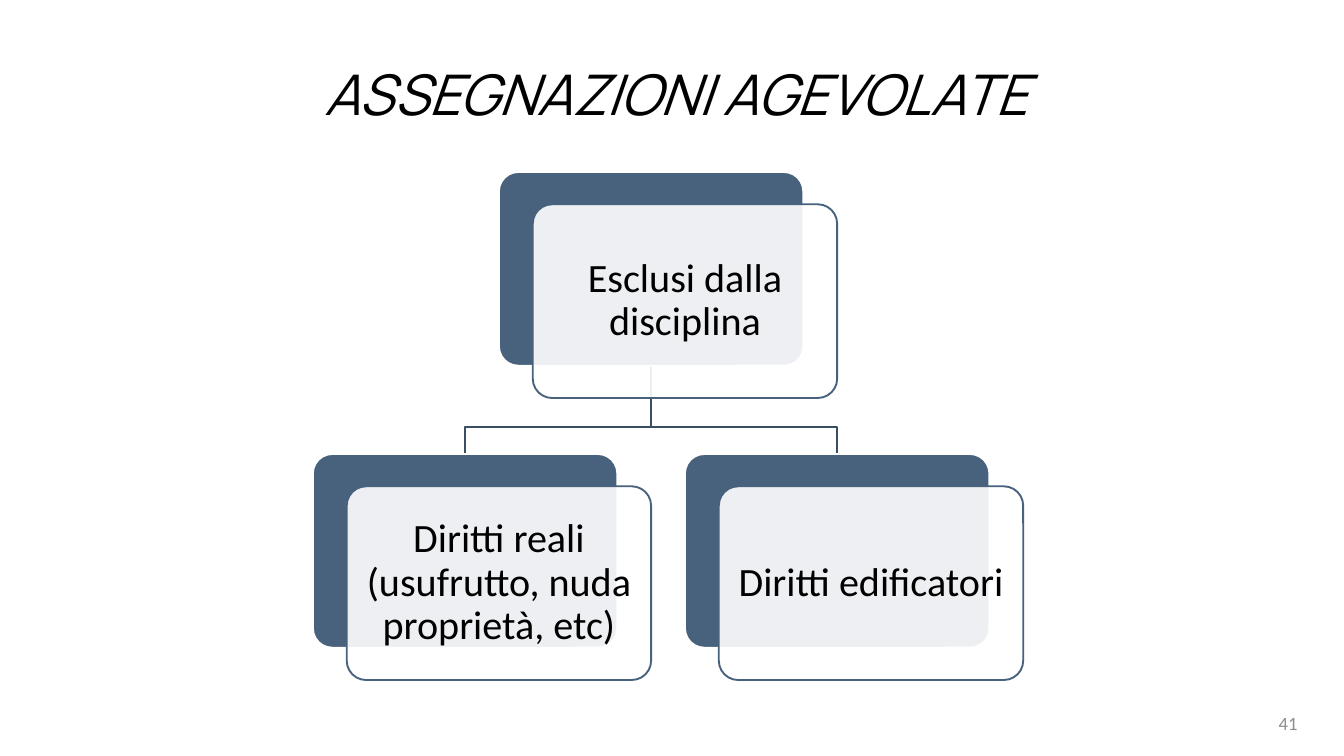
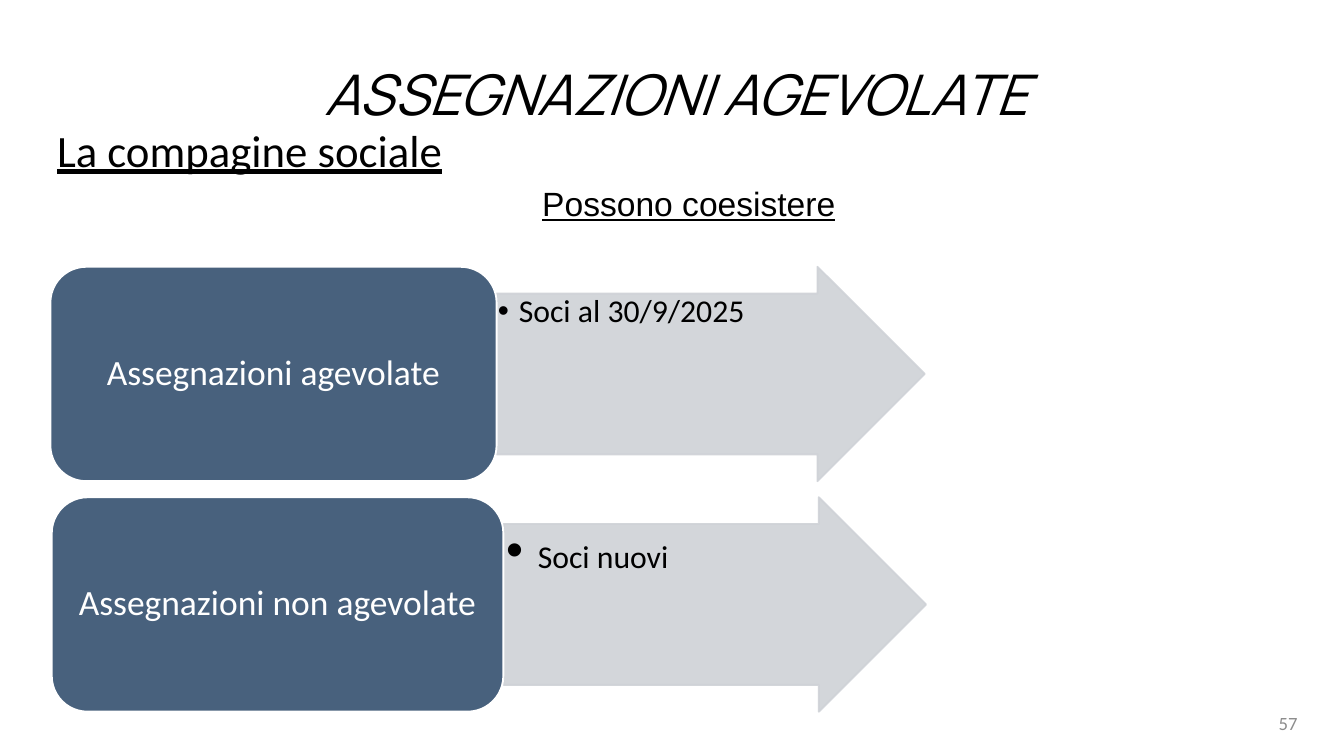
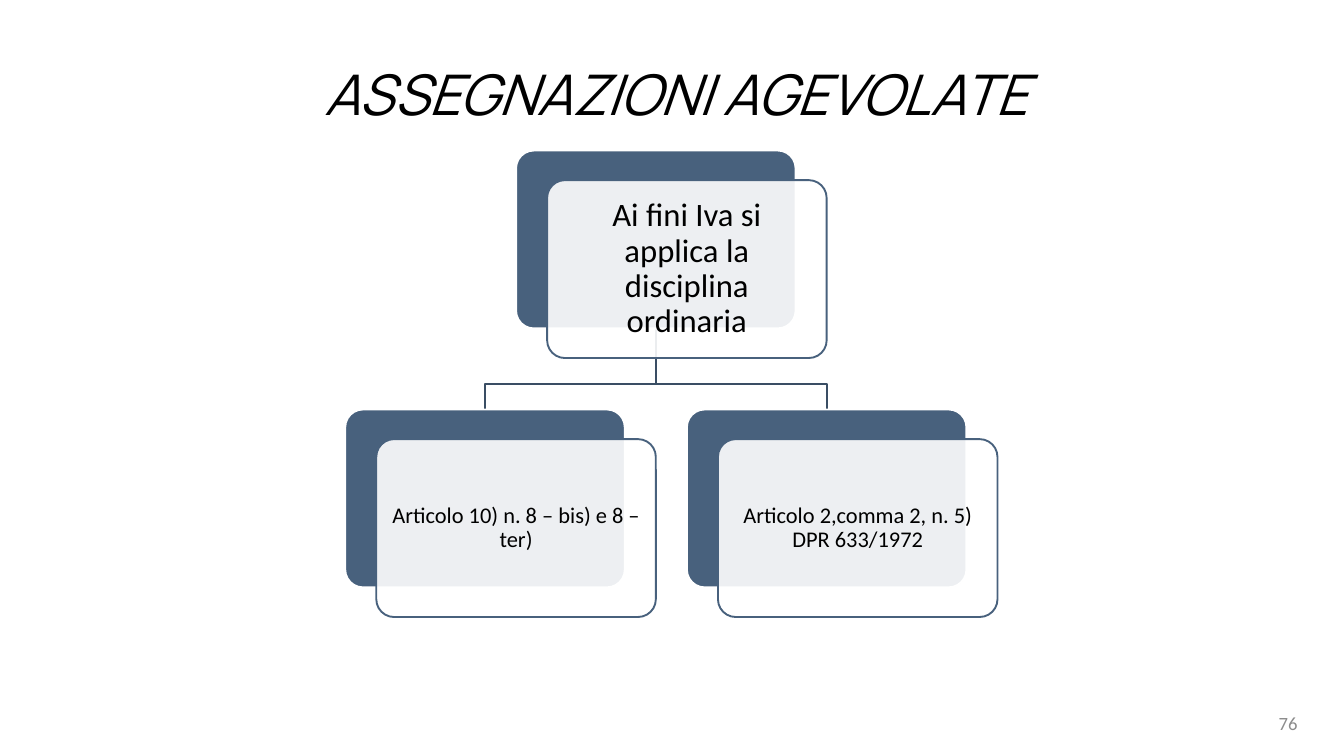
from lxml import etree
from pptx import Presentation
from pptx import util as u
from pptx.dml.color import RGBColor
from pptx.enum import shapes, text
from pptx.oxml import ns

BLACK = RGBColor(0x00, 0x00, 0x00)
WHITE = RGBColor(0xFF, 0xFF, 0xFF)
SLATE = RGBColor(0x48, 0x61, 0x7D)
BRANCH = RGBColor(0x3A, 0x4E, 0x64)
MIST = RGBColor(0xCF, 0xD2, 0xD7)
GREY = RGBColor(0x8C, 0x8C, 0x8C)

TITLE_ONLY, TWO_CONTENT = 5, 3
CENTER, RIGHT, LEFT = text.PP_ALIGN.CENTER, text.PP_ALIGN.RIGHT, text.PP_ALIGN.LEFT
TOP, MIDDLE = text.MSO_ANCHOR.TOP, text.MSO_ANCHOR.MIDDLE


def write(shape, content, size, font="Calibri", color=BLACK, align=LEFT, anchor=TOP,
          spacing=1.0, insets=(0.1, 0.05), italic=False, underline=False,
          wrap=True, grow=False, hanging=None):
    frame = shape.text_frame
    frame.word_wrap = wrap
    fit = text.MSO_AUTO_SIZE
    frame.auto_size = fit.SHAPE_TO_FIT_TEXT if grow else fit.NONE
    frame.vertical_anchor = anchor
    frame.margin_left = frame.margin_right = u.Inches(insets[0])
    frame.margin_top = frame.margin_bottom = u.Inches(insets[1])
    paragraph = frame.paragraphs[0]
    paragraph.alignment = align
    paragraph.line_spacing = spacing
    paragraph.space_before = u.Pt(0)
    if hanging:
        properties = paragraph._p.get_or_add_pPr()
        properties.set("marL", str(u.Inches(hanging)))
        properties.set("indent", str(-u.Inches(hanging)))
    pieces = [(content, size)] if isinstance(content, str) else content
    for words, points in pieces:
        run = paragraph.add_run()
        run.text = words
        run.font.size = u.Pt(points)
        run.font.name = font
        run.font.color.rgb = color
        run.font.italic = italic
        run.font.underline = underline


def set_opacity(fill_owner, percent):
    for color in fill_owner.findall(ns.qn("a:solidFill") + "/" + ns.qn("a:srgbClr")):
        etree.SubElement(color, ns.qn("a:alpha")).set("val", str(percent * 1000))


class Deck:
    def __init__(self):
        self.presentation = Presentation()
        self.presentation.slide_width = u.Inches(20)
        self.presentation.slide_height = u.Inches(11.25)
        self.slide = None

    def new_slide(self, number, layout=TITLE_ONLY):
        layouts = self.presentation.slide_layouts
        self.slide = self.presentation.slides.add_slide(layouts[layout])
        title = self.slide.shapes.title
        self.place(title, 1.5, 0.58, 17.12, 1.28)
        write(title, "ASSEGNAZIONI AGEVOLATE", 60, font="Manrope", align=CENTER,
              spacing=1.25, italic=True, grow=True)
        self.label(number, 14.51, 10.46, 4.9, 0.59, size=20, color=GREY,
                   align=RIGHT, anchor=MIDDLE)

    def place(self, shape, *box):
        shape.left, shape.top, shape.width, shape.height = map(u.Inches, box)

    def label(self, content, *box, **style):
        write(self.slide.shapes.add_textbox(*map(u.Inches, box)), content, **style)

    def block(self, preset, *box, fill, line, opacity=100, adjust=(), line_opacity=100):
        block = self.slide.shapes.add_shape(preset, *map(u.Inches, box))
        block.shadow.inherit = False
        block.fill.solid()
        block.fill.fore_color.rgb = fill
        block.line.color.rgb = line
        block.line.width = u.Pt(2)
        for position, value in enumerate(adjust):
            block.adjustments[position] = value
        if opacity < 100:
            set_opacity(block.element.spPr, opacity)
        if line_opacity < 100:
            set_opacity(block.line._get_or_add_ln(), line_opacity)
        return block

    def rounded(self, *box, **style):
        return self.block(shapes.MSO_SHAPE.ROUNDED_RECTANGLE, *box, **style)

    def branch(self, *points):
        start, *rest = [(u.Inches(x), u.Inches(y)) for x, y in points]
        builder = self.slide.shapes.build_freeform(*start)
        builder.add_line_segments(rest, close=False)
        branch = builder.convert_to_shape()
        branch.shadow.inherit = False
        branch.fill.background()
        branch.line.color.rgb = BRANCH
        branch.line.width = u.Pt(2)

    def card(self, content, size, left, top, width, height):
        self.rounded(left, top, width, height, fill=SLATE, line=WHITE, adjust=[0.1])
        front = self.rounded(left + width / 9, top + height / 6, width, height,
                             fill=WHITE, line=SLATE, opacity=90, adjust=[0.1])
        write(front, content, size, align=CENTER, anchor=MIDDLE, spacing=0.9,
              insets=(size / 240, size / 240))

    def tree(self, root, children, center, top, width, root_size, child_size):
        height = width * 7 / 11
        pitch = width * 11 / 9
        root_bottom = top + height
        fork = root_bottom + 0.2 * width
        child_top = root_bottom + 0.29 * width
        child_centers = [center + pitch * side for side in (-0.5, 0.5)]
        for child_center in reversed(child_centers):
            self.branch((center, root_bottom), (center, fork),
                        (child_center, fork), (child_center, child_top))
        self.card(root, root_size, center - width / 2, top, width, height)
        for child, child_center in zip(children, child_centers):
            self.card(child, child_size, child_center - width / 2, child_top, width, height)

    def arrow_row(self, holder, topic, members, left, top, topic_width, arrow_width, inset):
        height = 3.19
        arrow_left = left + topic_width
        self.block(shapes.MSO_SHAPE.RIGHT_ARROW, arrow_left, top, arrow_width, height,
                   fill=MIST, line=MIST, opacity=90, line_opacity=90, adjust=[0.75, 0.5])
        member_list = self.slide.placeholders[holder]
        member_list.element.getparent().append(member_list.element)
        self.place(member_list, arrow_left, top + height / 8,
                   arrow_width - 1.2, height * 0.75)
        write(member_list, members, 34, spacing=0.9, insets=(inset, inset), hanging=0.31)
        topic_box = self.rounded(left, top, topic_width, height, fill=SLATE, line=WHITE)
        write(topic_box, topic, 38, color=WHITE, align=CENTER, anchor=MIDDLE,
              spacing=0.9, insets=(0.16, 0.08))


def main():
    deck = Deck()

    deck.new_slide("41")
    deck.tree("Esclusi dalla disciplina",
              ["Diritti reali (usufrutto, nuda proprietà, etc)", "Diritti edificatori"],
              center=9.69, top=2.56, width=4.53, root_size=43, child_size=43)

    deck.new_slide("57", layout=TWO_CONTENT)
    deck.label("La compagine sociale", 0.75, 1.77, 6.42, 0.91, size=48,
               underline=True, grow=True)
    deck.label("Possono coesistere", 7.97, 2.67, 4.61, 0.71, size=36, font="Arial",
               underline=True, wrap=False, grow=True)
    deck.arrow_row(1, "Assegnazioni agevolate", "Soci al 30/9/2025",
                   0.75, 3.97, 6.64, 6.37, inset=0.02)
    deck.arrow_row(2, "Assegnazioni non agevolate", [(" ", 52), ("Soci nuovi", 34)],
                   0.77, 7.4, 6.72, 6.29, inset=0.04)

    deck.new_slide("76")
    deck.tree("Ai fini Iva si applica la disciplina ordinaria",
              ["Articolo 10) n. 8 – bis) e 8 – ter)", "Articolo 2,comma 2, n. 5) DPR 633/1972"],
              center=9.76, top=2.24, width=4.16, root_size=35, child_size=24)

    deck.presentation.save("out.pptx")


if __name__ == "__main__":
    main()
